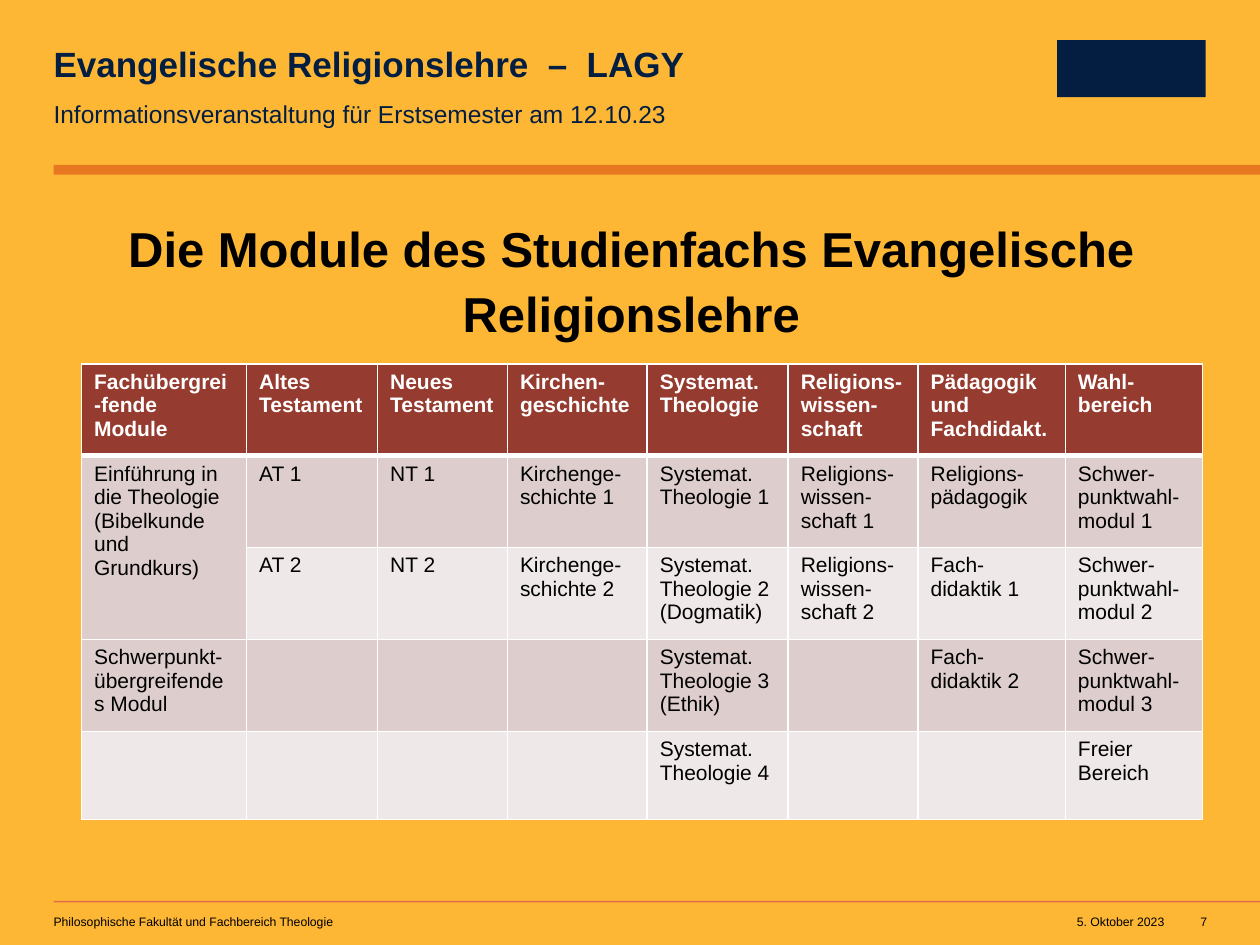
from lxml import etree
from pptx import Presentation
from pptx.dml.color import RGBColor
from pptx.enum import shapes, text
from pptx.oxml import ns
from pptx.util import Pt

COLORS = {
    "back": "FDB735", "navy": "041E42", "bar": "E87722", "rule": "E46D41",
    "head": "963B2F", "odd": "DDCECD", "even": "EFE8E8",
    "white": "FFFFFF", "black": "000000",
}
WIDTHS = [94.3, 74.9, 74.2, 79.9, 80.6, 74.2, 84.2, 78.5]
HEIGHTS = [52.5, 52.5, 52.5, 52.5, 50.4]
ROWS = [
    ["Fachübergrei-fende Module", "Altes Testament", "Neues Testament",
     "Kirchen-geschichte", "Systemat.\nTheologie", "Religions-wissen-schaft",
     "Pädagogik und Fachdidakt.", "Wahl-bereich"],
    ["Einführung in die Theologie\n(Bibelkunde und Grundkurs)", "AT 1", "NT 1",
     "Kirchenge-schichte 1", "Systemat. Theologie 1",
     "Religions-wissen-schaft 1", "Religions-pädagogik",
     "Schwer-punktwahl-modul 1"],
    ["", "AT 2", "NT 2", "Kirchenge-schichte 2",
     "Systemat. Theologie 2 (Dogmatik)", "Religions-wissen-schaft 2",
     "Fach-didaktik 1", "Schwer-punktwahl-modul 2"],
    ["Schwerpunkt-übergreifendes Modul", "", "", "",
     "Systemat. Theologie 3 (Ethik)", "", "Fach-didaktik 2",
     "Schwer-punktwahl-modul 3"],
    ["", "", "", "", "Systemat. Theologie 4", "", "", "Freier Bereich"],
]
LEFT, RIGHT = text.PP_ALIGN.LEFT, text.PP_ALIGN.RIGHT
CENTER = text.PP_ALIGN.CENTER


def color(name):
    return RGBColor.from_string(COLORS[name])


def write(frame, words, size=12, tint="black", bold=False, align=LEFT,
          line=None, after=None):
    """Fill a text frame, one paragraph for each line of words."""
    frame.text = words
    for para in frame.paragraphs:
        para.alignment = align
        para.line_spacing = line
        para.space_after = None if after is None else Pt(after)
        for run in para.runs:
            font = run.font
            font.name, font.size, font.bold = "Arial", Pt(size), bold
            font.color.rgb = color(tint)


def label(slide, box, words, wrap=True, **style):
    frame = slide.shapes.add_textbox(*map(Pt, box)).text_frame
    frame.margin_left = frame.margin_right = 0
    frame.margin_top = frame.margin_bottom = 0
    frame.word_wrap = wrap
    write(frame, words, **style)


def block(slide, box, tint):
    shape = slide.shapes.add_shape(shapes.MSO_SHAPE.RECTANGLE, *map(Pt, box))
    shape.shadow.inherit = False
    shape.fill.solid()
    shape.fill.fore_color.rgb = color(tint)
    shape.line.fill.background()


def border(cell, top, bottom):
    """Draw white cell borders; top and bottom are widths in points."""
    props = cell._tc.get_or_add_tcPr()
    sides = {"lnL": 1, "lnR": 1, "lnT": top, "lnB": bottom}
    for spot, (side, width) in enumerate(sides.items()):
        line = etree.Element(ns.qn("a:" + side), w=str(Pt(width)))
        fill = etree.SubElement(line, ns.qn("a:solidFill"))
        etree.SubElement(fill, ns.qn("a:srgbClr"), val=COLORS["white"])
        props.insert(spot, line)


def grid(slide, left, top):
    table = slide.shapes.add_table(
        len(ROWS), len(WIDTHS), Pt(left), Pt(top),
        Pt(sum(WIDTHS)), Pt(sum(HEIGHTS))).table
    for col, width in zip(table.columns, WIDTHS):
        col.width = Pt(width)
    for i, words in enumerate(ROWS):
        table.rows[i].height = Pt(HEIGHTS[i])
        head = i == 0
        tint = "head" if head else "odd" if i % 2 else "even"
        for j, word in enumerate(words):
            cell = table.cell(i, j)
            cell.fill.solid()
            cell.fill.fore_color.rgb = color(tint)
            border(cell, 3 if i == 1 else 1, 3 if head else 1)
            write(cell.text_frame, word, bold=head,
                  tint="white" if head else "black")
    table.cell(1, 0).merge(table.cell(2, 0))


def main():
    deck = Presentation()
    deck.slide_width, deck.slide_height = Pt(720), Pt(540)
    slide = deck.slides.add_slide(deck.slide_layouts[6])
    slide.background.fill.solid()
    slide.background.fill.fore_color.rgb = color("back")

    block(slide, (30.6, 514.8, 689.4, 0.9), "rule")
    block(slide, (30.6, 94.3, 689.4, 5.5), "bar")
    block(slide, (604, 23, 85, 32.5), "navy")

    label(slide, (30.6, 24, 404, 48), "Evangelische Religionslehre\u00a0 –\u00a0 LAGY"
          .replace("\u00a0", " "), size=20, tint="navy", bold=True)
    label(slide, (30.6, 48.2, 404, 22.3),
          "Informationsveranstaltung für Erstsemester am 12.10.23",
          size=14, tint="navy", line=1.5, after=8)
    label(slide, (33.1, 121.7, 655.2, 128.2),
          "Die Module des Studienfachs Evangelische Religionslehre",
          size=28, bold=True, align=CENTER, line=1.1, after=8)
    grid(slide, 46.6, 207.9)

    label(slide, (30.6, 522.7, 323.3, 8.6),
          "Philosophische Fakultät und Fachbereich Theologie", size=7)
    label(slide, (614.2, 522.7, 51.1, 8.6), "5. Oktober 2023",
          wrap=False, size=7, align=RIGHT)
    label(slide, (675.4, 522.7, 14.4, 8.6), "7",
          wrap=False, size=7, align=RIGHT)
    deck.save("out.pptx")


if __name__ == "__main__":
    main()
